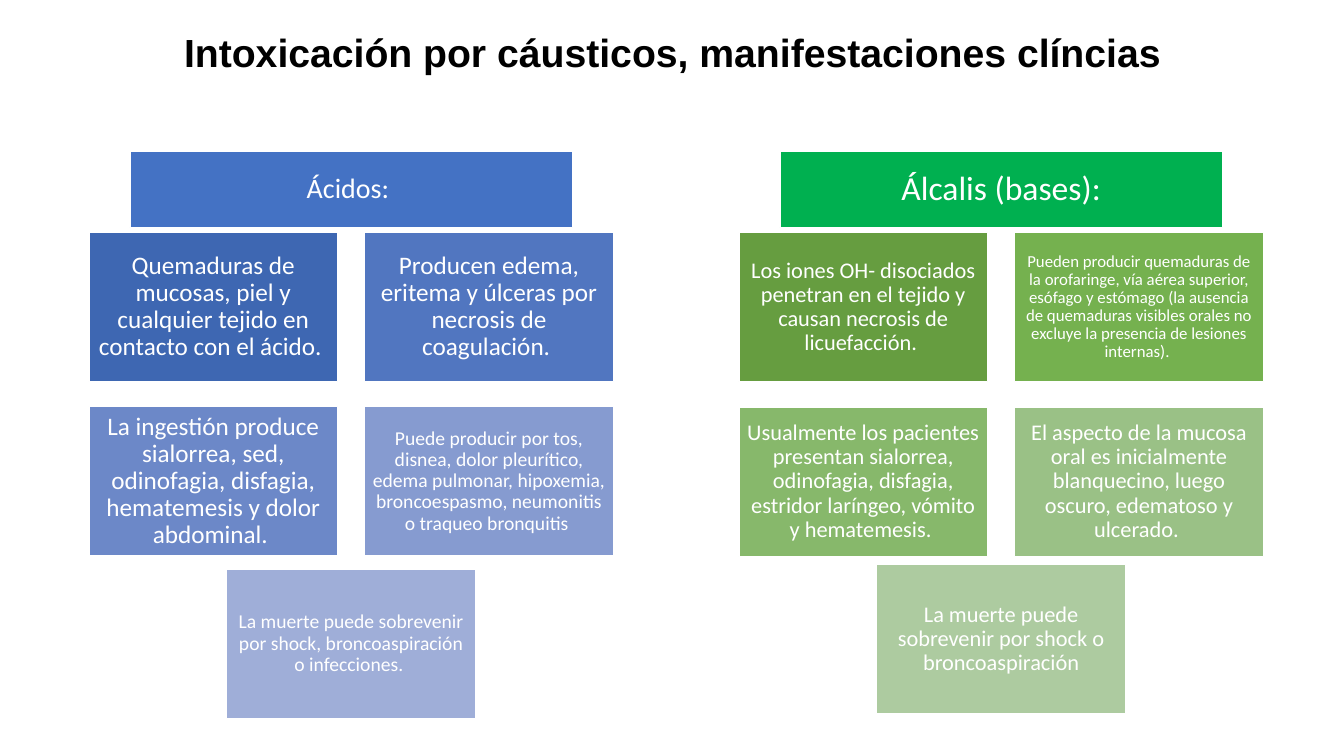
"""Build the slide comparing clinical signs of acid and alkali poisoning."""
import pptx
import pptx.dml.color
import pptx.enum.shapes
import pptx.enum.text
import pptx.util

Cm = pptx.util.Cm
Pt = pptx.util.Pt
COLORS = {
    "text": "FFFFFF", "title": "000000",
    "acid": "4472C4", "acid 1": "3E67B2", "acid 2": "5176C0",
    "acid 3": "6C88C8", "acid 4": "869BD0", "acid 5": "9FAED8",
    "alkali": "00B050", "alkali 1": "669D40", "alkali 2": "75B14F",
    "alkali 3": "87B86B", "alkali 4": "9AC186", "alkali 5": "ADCBA0",
}


def write(shape, text, *, size, color="text", font="Calibri", bold=False):
    """Fill a shape with one centred paragraph."""
    frame = shape.text_frame
    frame.word_wrap = True
    frame.auto_size = pptx.enum.text.MSO_AUTO_SIZE.NONE
    frame.vertical_anchor = pptx.enum.text.MSO_ANCHOR.MIDDLE
    para = frame.paragraphs[0]
    para.alignment = pptx.enum.text.PP_ALIGN.CENTER
    para.line_spacing = 0.9
    span = para.add_run()
    span.text = text
    span.font.name = font
    span.font.size = Pt(size)
    span.font.bold = bold
    span.font.color.rgb = pptx.dml.color.RGBColor.from_string(COLORS[color])


def add_box(page, text, left, top, width, height, fill, size):
    """Add a filled rectangle with white text."""
    box = page.shapes.add_shape(
        pptx.enum.shapes.MSO_SHAPE.RECTANGLE, Cm(left), Cm(top), Cm(width), Cm(height))
    box.shadow.inherit = False
    box.fill.solid()
    box.fill.fore_color.rgb = pptx.dml.color.RGBColor.from_string(COLORS[fill])
    box.line.color.rgb = pptx.dml.color.RGBColor.from_string(COLORS["text"])
    box.line.width = Pt(1)
    frame = box.text_frame
    frame.margin_left = frame.margin_right = Pt(size * 0.3)
    frame.margin_top = frame.margin_bottom = Pt(size * 0.3)
    write(box, text, size=size)


deck = pptx.Presentation()
deck.slide_width = Cm(33.87)
deck.slide_height = Cm(19.05)
page = deck.slides.add_slide(deck.slide_layouts[5])

title = page.shapes.title
title.left, title.top, title.width, title.height = Cm(2.34), Cm(0.41), Cm(29.21), Cm(1.93)
write(title, "Intoxicación por cáusticos, manifestaciones clíncias",
      size=28, color="title", font="Arial", bold=True)

BOX_WIDTH, BOX_HEIGHT, COLUMN_STEP = 6.27, 3.76, 6.95
HEADER_WIDTH, HEADER_HEIGHT = 11.15, 1.93
PANEL_WIDTH = COLUMN_STEP + BOX_WIDTH

panels = [
    ("acid", 2.24, "Ácidos: ", 20, (5.85, 10.25, 14.34), [
        ("Quemaduras de mucosas, piel y cualquier tejido en contacto con el ácido. ", 18),
        ("Producen edema, eritema y úlceras por necrosis de coagulación. ", 18),
        ("La ingestión produce sialorrea, sed, odinofagia, disfagia, hematemesis "
         "y dolor abdominal. ", 18),
        ("Puede producir por tos, disnea, dolor pleurítico, edema pulmonar, hipoxemia, "
         "broncoespasmo, neumonitis o traqueo bronquitis ", 14),
        ("La muerte puede sobrevenir por shock, broncoaspiración o infecciones. ", 14),
    ]),
    ("alkali", 18.62, "Álcalis (bases):", 24, (5.86, 10.26, 14.23), [
        ("Los iones OH- disociados penetran en el tejido y causan necrosis "
         "de licuefacción. ", 16),
        ("Pueden producir quemaduras de la orofaringe, vía aérea superior, esófago y "
         "estómago (la ausencia de quemaduras visibles orales no excluye la presencia "
         "de lesiones internas). ", 12),
        ("Usualmente los pacientes presentan sialorrea, odinofagia, disfagia, estridor "
         "laríngeo, vómito y hematemesis. ", 16),
        ("El aspecto de la mucosa oral es inicialmente blanquecino, luego oscuro, "
         "edematoso y ulcerado. ", 16),
        ("La muerte puede sobrevenir por shock o broncoaspiración", 16),
    ]),
]

for name, left, heading, heading_size, tops, signs in panels:
    for index, (text, size) in enumerate(signs):
        row, column = divmod(index, 2)
        offset = COLUMN_STEP / 2 if row == 2 else column * COLUMN_STEP
        add_box(page, text, left + offset, tops[row], BOX_WIDTH, BOX_HEIGHT,
                f"{name} {index + 1}", size)
    add_box(page, heading, left + (PANEL_WIDTH - HEADER_WIDTH) / 2, 3.81,
            HEADER_WIDTH, HEADER_HEIGHT, name, heading_size)

deck.save("out.pptx")
